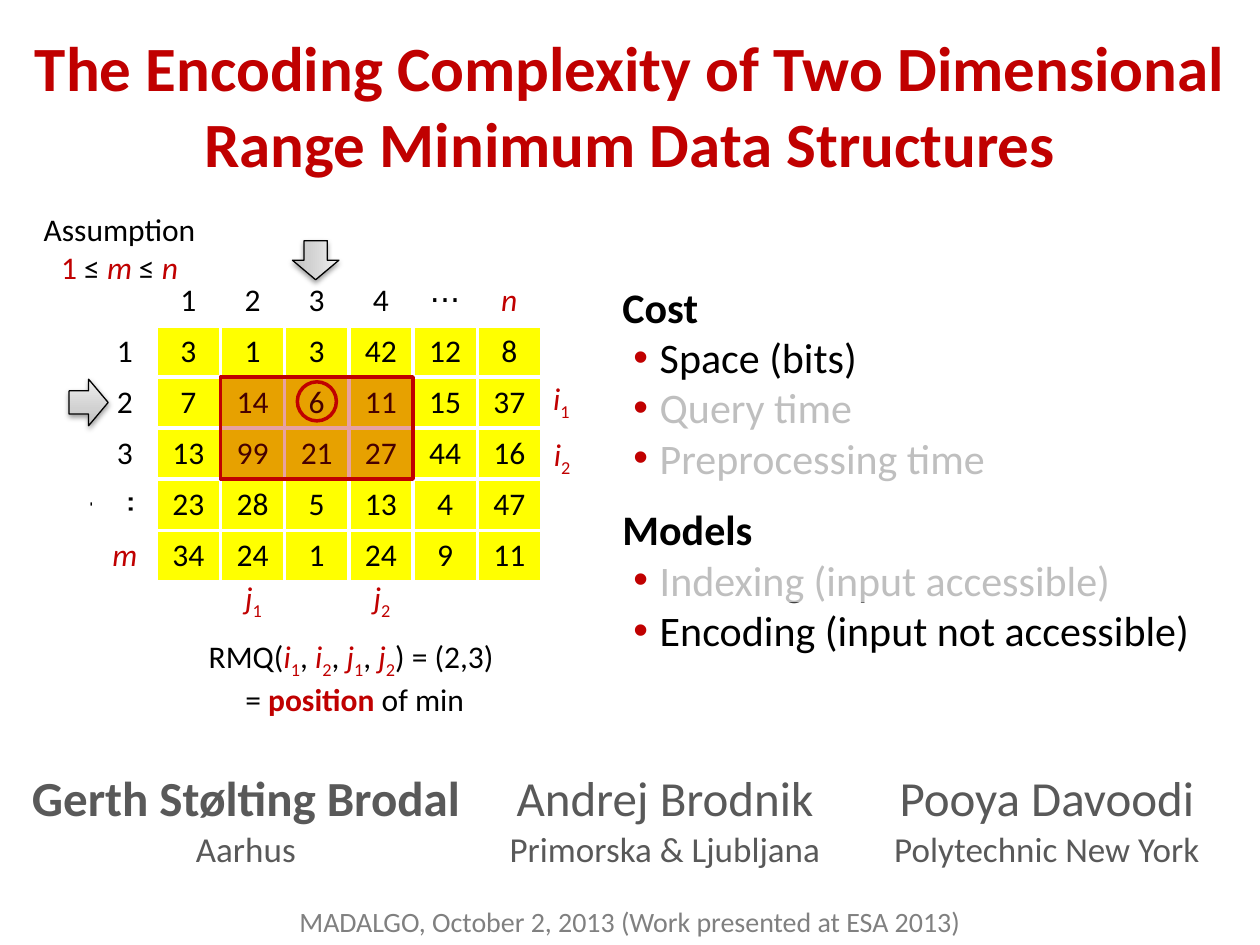
from dataclasses import dataclass
from lxml.etree import SubElement as Sub
from pptx import Presentation
from pptx.dml.color import RGBColor as RGB
from pptx.enum.shapes import MSO_SHAPE as Kind
from pptx.enum.text import MSO_ANCHOR as Anchor, MSO_AUTO_SIZE as Auto, PP_ALIGN as Align
from pptx.oxml.ns import qn
from pptx.util import Pt

TITLE = "The Encoding Complexity of Two Dimensional Range Minimum Data Structures"
VENUE = "MADALGO, October 2, 2013 (Work presented at ESA 2013)"
HEADS = ["1", "2", "3", "4", "⋅⋅⋅", "n"]
SIDES = ["1", "2", "3", "⋅⋅⋅", "m"]
GRID = [
    [3, 1, 3, 42, 12, 8],
    [7, 14, 6, 11, 15, 37],
    [13, 99, 21, 27, 44, 16],
    [23, 28, 5, 13, 4, 47],
    [34, 24, 1, 24, 9, 11],
]
TEAM = [
    ("Gerth Stølting Brodal", "Aarhus", 275),
    ("Andrej Brodnik", "Primorska & Ljubljana", 204),
    ("Pooya Davoodi", "Polytechnic New York", 232.5),
]
TOPICS = [
    ("Cost", ["Space (bits)", "Query time", "Preprocessing time"]),
    ("Models", ["Indexing (input accessible)", "Encoding (input not accessible)"]),
]
# Style letters: r red, i italic, s subscript, b bold
I1, I2, J1, J2 = [[(name, "ri"), (sub, "rs")] for name in "ij" for sub in "12"]
COMMA = [(", ", "")]
QUERY = [
    [("RMQ(", "")] + I1 + COMMA + I2 + COMMA + J1 + COMMA + J2 + [(") = (2,3) ", "")],
    [("= ", ""), ("position ", "rb"), ("of min", "")],
]
ASSUME = [
    [("Assumption", "")],
    [("1 ", "r"), ("≤ ", ""), ("m", "ri"), (" ≤ ", ""), ("n", "ri")],
]


@dataclass
class Theme:
    font: str = "Calibri"
    red: str = "C00000"
    ink: str = "000000"
    gray: str = "595959"
    pale: str = "808080"
    white: str = "FFFFFF"
    cell: str = "FFFF00"
    fade: tuple = ((0, "BDBDBD"), (35, "D1D1D1"), (100, "EEEEEE"))
    title: int = 36
    name: int = 28
    list: int = 24
    place: int = 20
    base: int = 18
    foot: int = 16


T = Theme()
LEFT, TOP, SIDE, COL, ROW = 53.3, 157, 36, 36.7, 29.2


def color(hue):
    return RGB.from_string(hue)


def style(run, size, hue=T.ink, bold=False, ital=False):
    font = run.font
    font.name, font.size, font.bold, font.italic = T.font, Pt(size), bold, ital
    font.color.rgb = color(hue)


def write(par, runs, size=T.base):
    for text, marks in runs:
        run = par.add_run()
        run.text = text
        style(run, size, T.red if "r" in marks else T.ink, "b" in marks, "i" in marks)
        if "s" in marks:
            run._r.get_or_add_rPr().set("baseline", "-25000")


def place(shape, *spot):
    shape.left, shape.top, shape.width, shape.height = map(Pt, spot)


def label(slide, lines, spot, align=Align.CENTER):
    frame = slide.shapes.add_textbox(*map(Pt, spot)).text_frame
    frame.word_wrap = True
    for n, runs in enumerate(lines):
        par = frame.add_paragraph() if n else frame.paragraphs[0]
        par.alignment = align
        write(par, runs)
    return frame


def tint(node, hue, alpha=None):
    clr = Sub(node, qn("a:srgbClr"), val=hue)
    if alpha is not None:
        Sub(clr, qn("a:alpha"), val=str(alpha * 1000))


def draw(slide, kind, spot, fill=None, alpha=100, line=None, width=2):
    shape = slide.shapes.add_shape(kind, *map(Pt, spot))
    shape.shadow.inherit = False
    if fill:
        shape.fill.solid()
        shape.fill.fore_color.rgb = color(fill)
        clr = shape._element.spPr.find(".//" + qn("a:srgbClr"))
        Sub(clr, qn("a:alpha"), val=str(alpha * 1000))
    else:
        shape.fill.background()
    if line:
        shape.line.color.rgb = color(line)
        shape.line.width = Pt(width)
    else:
        shape.line.fill.background()
    return shape


def arrow(slide, left, top, turn=0):
    shape = draw(slide, Kind.RIGHT_ARROW, (left, top, 22.3, 26.6), line=T.ink, width=0.75)
    shape.rotation = turn
    shape.fill.gradient()
    shape.fill.gradient_angle = 90
    prop = shape._element.spPr
    stops = prop.find(".//" + qn("a:gsLst"))
    for stop in list(stops):
        stops.remove(stop)
    for pos, hue in T.fade:
        tint(Sub(stops, qn("a:gs"), pos=str(pos * 1000)), hue)
    glow = Sub(prop.find(qn("a:effectLst")), qn("a:outerShdw"), blurRad=str(Pt(3.1)),
               dist=str(Pt(1.6)), dir="5400000", rotWithShape="0")
    tint(glow, T.ink, 38)


def table(slide, spot, cols, rows):
    grid = slide.shapes.add_table(len(rows), len(cols), *map(Pt, spot)).table
    grid.first_row = grid.horz_banding = False
    for part, size in zip(list(grid.columns) + list(grid.rows), cols + rows):
        if part in list(grid.columns)[:0]:
            continue
        if hasattr(part, "width"):
            part.width = Pt(size)
        else:
            part.height = Pt(size)
    return grid


def fill_cell(cell, text, size, hue, bold=False, ital=False, back=None):
    cell.text_frame.text = text
    par = cell.text_frame.paragraphs[0]
    par.alignment = Align.CENTER
    for run in par.runs:
        style(run, size, hue, bold, ital)
    if back:
        cell.fill.solid()
        cell.fill.fore_color.rgb = color(back)
    else:
        cell.fill.background()


def matrix(slide):
    cells = [[""] + HEADS] + [[side] + row for side, row in zip(SIDES, GRID)]
    grid = table(slide, (LEFT, TOP, SIDE + 6 * COL, 6 * ROW), [SIDE] + [COL] * 6, [ROW] * 6)
    for r, row in enumerate(cells):
        for c, text in enumerate(row):
            cell = grid.cell(r, c)
            prop = cell._tc.get_or_add_tcPr()
            for edge in ("lnL", "lnR", "lnT", "lnB"):
                line = Sub(prop, qn("a:" + edge), w=str(Pt(2.25)))
                tint(Sub(line, qn("a:solidFill")), T.white)
            var = text in ("m", "n")
            fill_cell(cell, str(text), T.base, T.red if var else T.ink, ital=var,
                      back=T.cell if r and c else None)
            if c == 0 and text == "⋅⋅⋅":
                prop.set("vert", "vert")


def team(slide):
    grid = table(slide, (3, 440, 711.5, 62.5), [wide for *_, wide in TEAM], [32.8, 29.7])
    for c, (name, home, _) in enumerate(TEAM):
        for r, (text, size) in enumerate([(name, T.name), (home, T.place)]):
            cell = grid.cell(r, c)
            cell.margin_left = cell.margin_right = cell.margin_top = cell.margin_bottom = 0
            fill_cell(cell, text, size, T.gray, bold=r == c == 0)


def topics(body):
    place(body, 348.5, 157, 363, 232)
    frame = body.text_frame
    frame.auto_size = Auto.NONE
    lines = [(text, n > 0, n == len(items))
             for head, items in TOPICS for n, text in enumerate([head] + items)]
    for n, (text, item, last) in enumerate(lines):
        par = frame.add_paragraph() if n else frame.paragraphs[0]
        par.text = text
        par.space_before = Pt(0)
        par.space_after = Pt(12 if last and n < len(lines) - 1 else 0)
        style(par.runs[0], T.list, bold=not item)
        prop = par._p.get_or_add_pPr()
        prop.set("marL", str(Pt(21.3)))
        prop.set("indent", str(Pt(-15 if item else -21.3)))
        if item:
            tint(Sub(prop, qn("a:buClr")), T.red)
            Sub(prop, qn("a:buFont"), typeface="Arial")
            Sub(prop, qn("a:buChar"), char="•")
        else:
            Sub(prop, qn("a:buNone"))


def main():
    deck = Presentation()
    deck.slide_width, deck.slide_height = Pt(720), Pt(540)
    slide = deck.slides.add_slide(deck.slide_layouts[1])
    title, body = slide.placeholders
    place(title, 0, 1.5, 720, 116)
    title.text_frame.text = TITLE
    title.text_frame.auto_size = Auto.NONE
    title.text_frame.vertical_anchor = Anchor.MIDDLE
    style(title.text_frame.paragraphs[0].runs[0], T.title, T.red, bold=True)
    topics(body)

    foot = label(slide, [[(VENUE, "")]], (0, 517, 720, 19.5))
    foot.margin_left = foot.margin_right = foot.margin_top = foot.margin_bottom = 0
    style(foot.paragraphs[0].runs[0], T.foot, T.pale)

    matrix(slide)
    xs = [LEFT + SIDE + n * COL for n in range(6)]
    ys = [TOP + n * ROW for n in range(6)]
    draw(slide, Kind.RECTANGLE, (xs[1], ys[2], 3 * COL, 2 * ROW), T.red, 37, T.red)
    draw(slide, Kind.OVAL, (xs[2] + 7.2, ys[2] + 2.8, 22.3, 22.3), line=T.red)
    for runs, left, top in [(I1, 309, 213), (I2, 309.5, 245),
                            (J1, xs[1] + 7, 327), (J2, xs[3] + 7, 327)]:
        label(slide, [runs], (left, top, 27.5, 29), Align.LEFT)
    arrow(slide, 39.5, 216.7)
    arrow(slide, 169.2, 135.4, 90)
    label(slide, ASSUME, (15, 116.6, 106.6, 51))
    label(slide, QUERY, (108, 360.7, 189.4, 51))
    team(slide)
    for spot in [(375, 224.6, 193, 53.3), (377.3, 319, 283.7, 25.2)]:
        draw(slide, Kind.RECTANGLE, spot, T.white, 75)
    deck.save("out.pptx")


if __name__ == "__main__":
    main()
